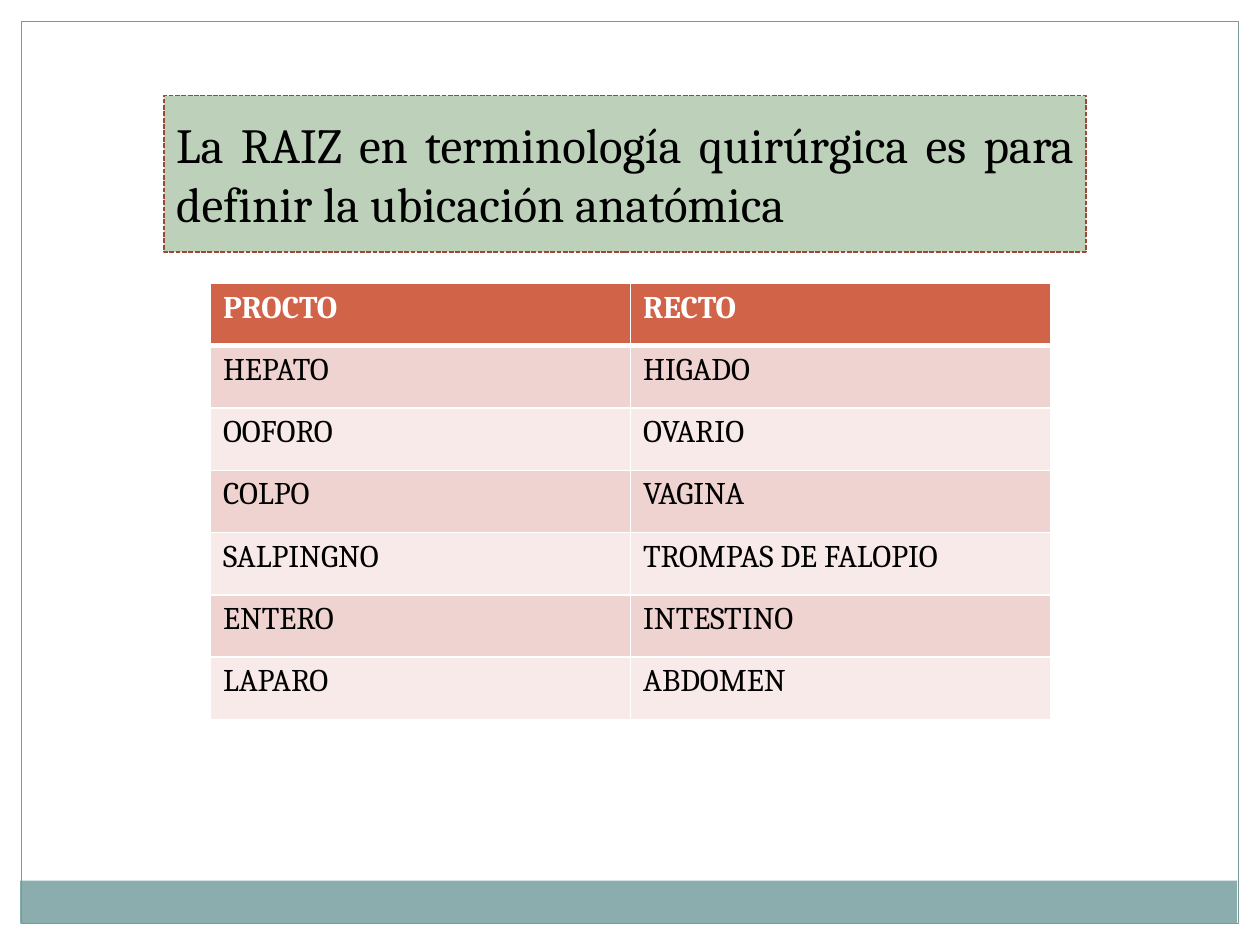
"""Build a slide that lists surgical word roots and the anatomy they name."""
from dataclasses import dataclass
from typing import Optional

from lxml.etree import SubElement
from pptx import Presentation
from pptx.dml.color import RGBColor
from pptx.enum.dml import MSO_LINE_DASH_STYLE as Dash
from pptx.enum.shapes import MSO_AUTO_SHAPE_TYPE as ShapeType
from pptx.enum.text import MSO_VERTICAL_ANCHOR as Anchor, PP_PARAGRAPH_ALIGNMENT as Align
from pptx.oxml.ns import qn
from pptx.util import Inches, Pt

FONT = "Cambria"
WHITE, BLACK = "FFFFFF", "000000"
HEADER_FILL, BAND_FILLS = "D16349", ("F7EAE9", "EED3D0")
TITLE = "La RAIZ en terminología quirúrgica es para definir la ubicación anatómica"
ROOTS = (
    ("PROCTO", "RECTO"),
    ("HEPATO", "HIGADO"),
    ("OOFORO", "OVARIO"),
    ("COLPO", "VAGINA"),
    ("SALPINGNO", "TROMPAS DE FALOPIO"),
    ("ENTERO", "INTESTINO"),
    ("LAPARO", "ABDOMEN"),
)


@dataclass(frozen=True)
class Panel:
    left: float
    top: float
    width: float
    height: float
    fill: Optional[str] = None
    line: Optional[str] = None
    weight: float = 0.75


BACKDROP = (
    Panel(0, 0, 10, 0.17, WHITE),
    Panel(9.83, 0, 0.17, 7.5, WHITE),
    Panel(0, 0, 0.17, 7.5, WHITE),
    Panel(0.16, 6.99, 9.66, 0.34, "8CADAE"),
    Panel(0.17, 0.17, 9.66, 7.16, line="7C999A"),
)
TITLE_PANEL = Panel(1.3, 0.76, 7.32, 1.24, "BCD0BA", "9B4936", 0.9)


def color(code: str) -> RGBColor:
    return RGBColor.from_string(code)


def paint(fill, code: Optional[str]) -> None:
    if code:
        fill.solid()
        fill.fore_color.rgb = color(code)
    else:
        fill.background()


def style_text(para, size: float, code: str, bold: bool = False) -> None:
    for span in para.runs:
        span.font.name = FONT
        span.font.size = Pt(size)
        span.font.bold = bold
        span.font.color.rgb = color(code)


def add_panel(page, panel: Panel):
    bounds = (Inches(v) for v in (panel.left, panel.top, panel.width, panel.height))
    box = page.shapes.add_shape(ShapeType.RECTANGLE, *bounds)
    box.shadow.inherit = False
    paint(box.fill, panel.fill)
    paint(box.line.fill, panel.line)
    if panel.line:
        box.line.width = Pt(panel.weight)
    return box


def add_title(page) -> None:
    box = add_panel(page, TITLE_PANEL)
    box.line.dash_style = Dash.SQUARE_DOT
    frame = box.text_frame
    frame.word_wrap = True
    frame.vertical_anchor = Anchor.MIDDLE
    frame.text = TITLE
    para = frame.paragraphs[0]
    para.alignment = Align.JUSTIFY
    style_text(para, 28, BLACK)


def set_borders(cell, top: float, bottom: float) -> None:
    properties = cell._tc.get_or_add_tcPr()
    for tag, weight in (("lnL", 1), ("lnR", 1), ("lnT", top), ("lnB", bottom)):
        line = SubElement(properties, qn(f"a:{tag}"), w=str(Pt(weight)))
        SubElement(SubElement(line, qn("a:solidFill")), qn("a:srgbClr"), val=WHITE)


def add_roots_table(page) -> None:
    bounds = (Inches(v) for v in (1.67, 2.25, 6.67, 3.46))
    table = page.shapes.add_table(len(ROOTS), 2, *bounds).table
    for row, words in enumerate(ROOTS):
        header = row == 0
        for column, word in enumerate(words):
            cell = table.cell(row, column)
            set_borders(cell, top=3 if row == 1 else 1, bottom=3 if header else 1)
            paint(cell.fill, HEADER_FILL if header else BAND_FILLS[row % 2])
            cell.text_frame.text = word
            style_text(cell.text_frame.paragraphs[0], 18, WHITE if header else BLACK, header)


def main() -> None:
    deck = Presentation()
    deck.slide_width, deck.slide_height = Inches(10), Inches(7.5)
    page = deck.slides.add_slide(deck.slide_layouts[6])
    paint(page.background.fill, WHITE)
    for panel in BACKDROP:
        add_panel(page, panel)
    add_title(page)
    add_roots_table(page)
    deck.save("out.pptx")


if __name__ == "__main__":
    main()
